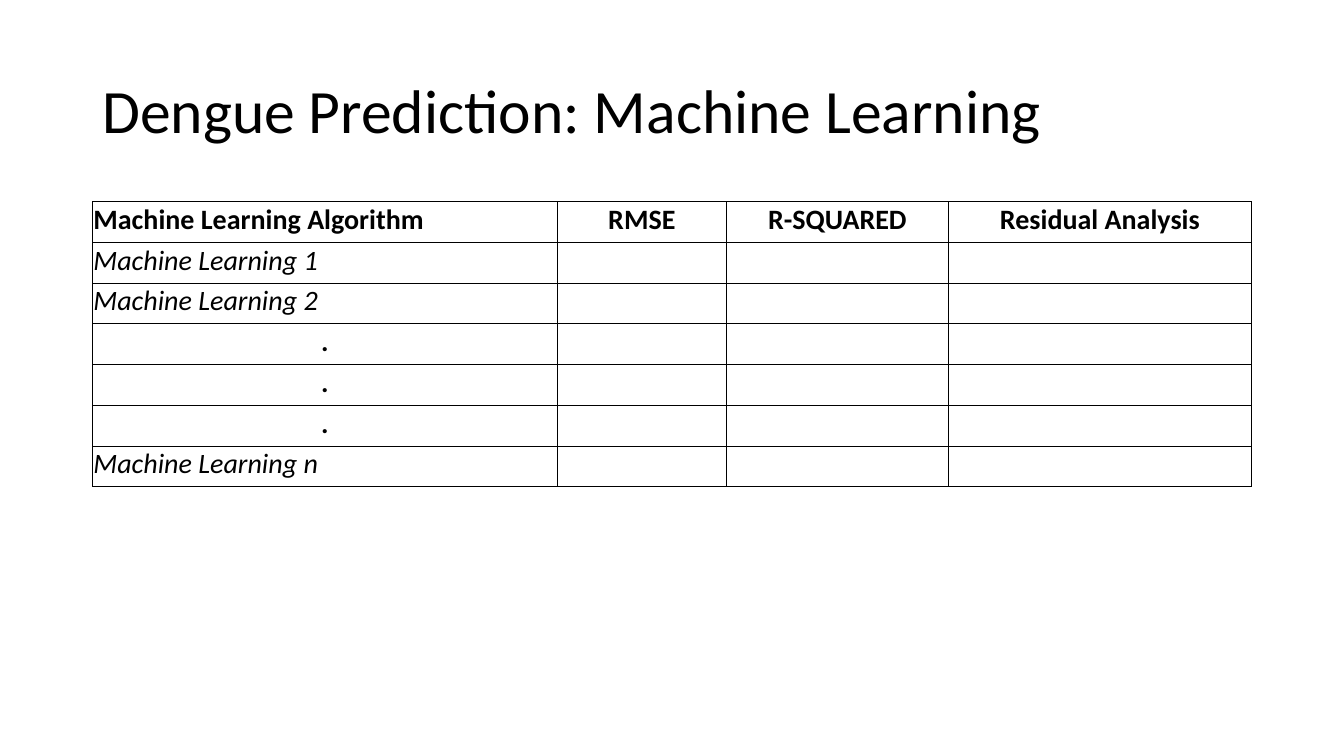
from lxml import etree
from pptx import Presentation
from pptx.dml.color import RGBColor
from pptx.enum.text import MSO_ANCHOR, PP_ALIGN
from pptx.oxml.ns import qn
from pptx.util import Pt

LEFT, CENTER = PP_ALIGN.LEFT, PP_ALIGN.CENTER
MIDDLE = MSO_ANCHOR.MIDDLE
COLORS = {"ink": "000000"}


def write(frame, text, size=20, bold=False, italic=False, align=LEFT, space=1.0):
    par = frame.paragraphs[0]
    par.alignment = align
    par.line_spacing = space
    font = par.font
    if text:
        run = par.add_run()
        run.text = text
        font = run.font
    font.name = "Calibri"
    font.size = Pt(size)
    font.bold = bold
    font.italic = italic
    font.color.rgb = RGBColor.from_string(COLORS["ink"])


def outline(cell):
    props = cell._tc.get_or_add_tcPr()
    for spot, side in enumerate(("lnL", "lnR", "lnT", "lnB")):
        line = etree.Element(qn(f"a:{side}"), w=str(Pt(0.5)))
        fill = etree.SubElement(line, qn("a:solidFill"))
        etree.SubElement(fill, qn("a:srgbClr"), val=COLORS["ink"])
        props.insert(spot, line)


deck = Presentation()
deck.slide_width, deck.slide_height = Pt(960), Pt(540)
slide = deck.slides.add_slide(deck.slide_layouts[6])

title = slide.shapes.add_textbox(Pt(66), Pt(28.8), Pt(828), Pt(104.4)).text_frame
title.word_wrap = True
title.vertical_anchor = MIDDLE
write(title, "Dengue Prediction: Machine Learning", size=44, space=0.9)

heads = ["Machine Learning Algorithm", "RMSE", "R-SQUARED", "Residual Analysis"]
names = ["Machine Learning 1", "Machine Learning 2", ".", ".", ".", "Machine Learning n"]
rows = [heads] + [[name, "", "", ""] for name in names]
widths = [332, 121, 158.4, 216.6]
height = 29.1

table = slide.shapes.add_table(
    len(rows), len(widths), Pt(66), Pt(144), Pt(sum(widths)), Pt(height * len(rows))
).table
table.first_row = False
table.horz_banding = False
for col, width in zip(table.columns, widths):
    col.width = Pt(width)

for r, row in enumerate(rows):
    table.rows[r].height = Pt(height)
    for c, text in enumerate(row):
        cell = table.cell(r, c)
        cell.fill.background()
        cell.vertical_anchor = MIDDLE
        cell.margin_left = cell.margin_right = cell.margin_top = Pt(0.72)
        cell.margin_bottom = Pt(3.6)
        outline(cell)
        strong = r == 0 or text == "."
        align = CENTER if c > 0 or text == "." else LEFT
        write(cell.text_frame, text, bold=strong, italic=not strong, align=align)

deck.save("out.pptx")
